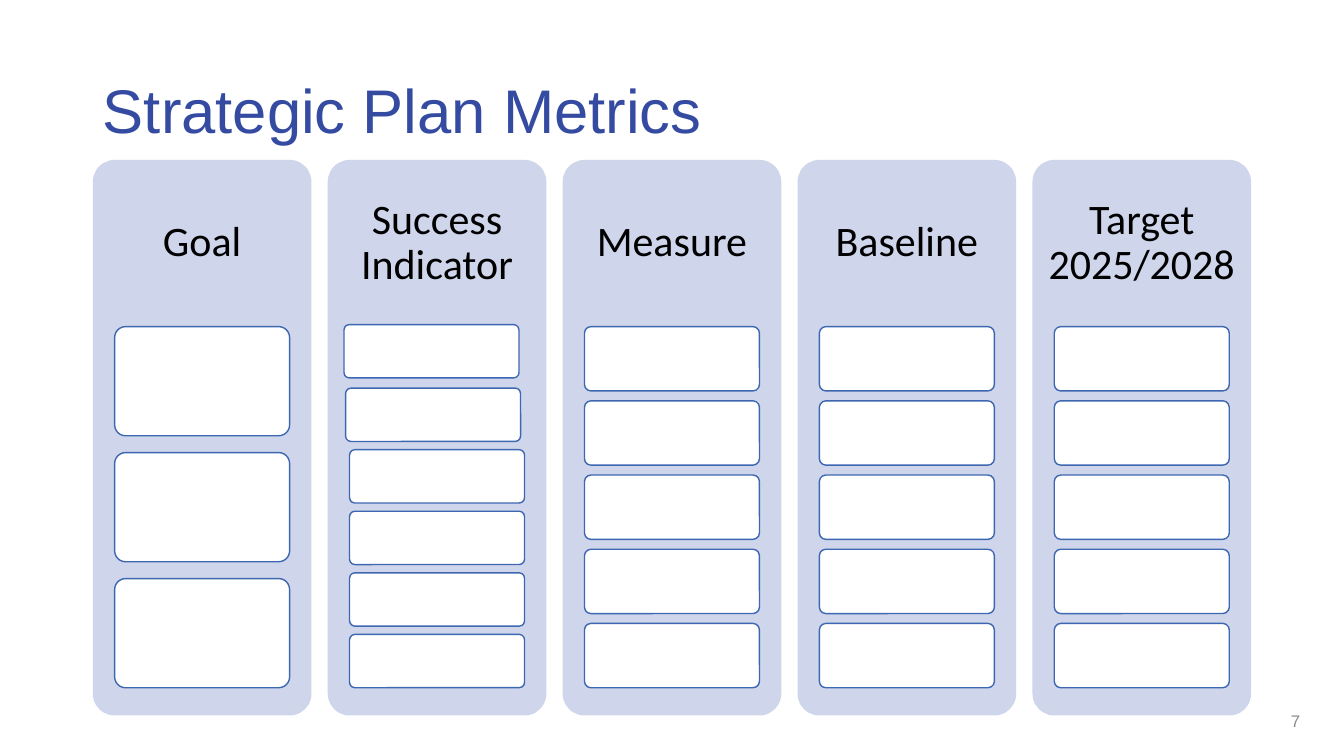
"""Build the Strategic Plan Metrics slide with five columns of empty entry boxes."""
from dataclasses import dataclass

from pptx import Presentation
from pptx import util as u
from pptx.dml.color import RGBColor
from pptx.enum import shapes, text

HEADING = "Strategic Plan Metrics"
PAGE = "7"
COLUMNS = [
    ("Goal", 3),
    ("Success Indicator", 6),
    ("Measure", 5),
    ("Baseline", 5),
    ("Target 2025/2028", 5),
]
NUDGES = {("Success Indicator", 0): (-0.14, -0.05), ("Success Indicator", 1): (-0.1, 0)}

LEFT, TOP, PITCH = 2.34, 4.03, 5.92
PANEL_WIDTH, PANEL_HEIGHT, HEADER_HEIGHT = 5.51, 14, 4.2
ENTRY_INSET, ENTRY_WIDTH, ENTRIES_HEIGHT = 0.55, 4.41, 9.1
GAP_RATIO = 2 / 13


@dataclass(frozen=True)
class Theme:
    """Colours, fonts and type sizes."""
    heading: str = "354BA2"
    page: str = "8C8C8C"
    panel: str = "CFD5EA"
    entry: str = "FFFFFF"
    outline: str = "3E67B2"
    ink: str = "000000"
    heading_font: str = "Arial"
    label_font: str = "Calibri"
    heading_size: int = 44
    label_size: int = 30
    page_size: int = 12


THEME = Theme()


def write(frame, words, font, size, color, align, spacing=1.0):
    """Put one formatted run in a vertically centred, wrapping frame."""
    frame.word_wrap = True
    frame.auto_size = text.MSO_AUTO_SIZE.NONE
    frame.vertical_anchor = text.MSO_ANCHOR.MIDDLE
    line = frame.paragraphs[0]
    line.alignment = align
    line.line_spacing = spacing
    run = line.add_run()
    run.text = words
    run.font.name = font
    run.font.size = u.Pt(size)
    run.font.color.rgb = RGBColor.from_string(color)


def rounded(group, box, fill, outline=None):
    """Add a rounded rectangle whose box is given in centimetres."""
    card = group.shapes.add_shape(shapes.MSO_SHAPE.ROUNDED_RECTANGLE, *map(u.Cm, box))
    card.adjustments[0] = 0.1
    card.shadow.inherit = False
    card.fill.solid()
    card.fill.fore_color.rgb = RGBColor.from_string(fill)
    if outline:
        card.line.color.rgb = RGBColor.from_string(outline)
        card.line.width = u.Pt(1)
    else:
        card.line.fill.background()


def add_column(group, left, label, count):
    """Add a panel, its label and evenly spaced entries."""
    rounded(group, (left, TOP, PANEL_WIDTH, PANEL_HEIGHT), THEME.panel)
    header = group.shapes.add_textbox(*map(u.Cm, (left, TOP, PANEL_WIDTH, HEADER_HEIGHT)))
    frame = header.text_frame
    frame.margin_left = frame.margin_right = u.Cm(0.3)
    frame.margin_top = frame.margin_bottom = u.Cm(0.3)
    write(frame, label, THEME.label_font, THEME.label_size, THEME.ink,
          text.PP_ALIGN.CENTER, 0.9)
    height = ENTRIES_HEIGHT / (count + (count - 1) * GAP_RATIO)
    for row in range(count):
        dx, dy = NUDGES.get((label, row), (0, 0))
        x = left + ENTRY_INSET + dx
        y = TOP + HEADER_HEIGHT + row * height * (1 + GAP_RATIO) + dy
        rounded(group, (x, y, ENTRY_WIDTH, height), THEME.entry, THEME.outline)


def main():
    """Assemble and save the slide."""
    deck = Presentation()
    deck.slide_width, deck.slide_height = u.Cm(33.87), u.Cm(19.05)
    slide = deck.slides.add_slide(deck.slide_layouts[5])

    heading = slide.shapes.title
    heading.left, heading.top, heading.width, heading.height = map(
        u.Cm, (LEFT, 1.02, 29.21, 3.68))
    write(heading.text_frame, HEADING, THEME.heading_font, THEME.heading_size,
          THEME.heading, text.PP_ALIGN.LEFT, 0.9)

    page = slide.shapes.add_textbox(*map(u.Cm, (25.4, 17.66, 7.62, 1.01)))
    write(page.text_frame, PAGE, THEME.heading_font, THEME.page_size,
          THEME.page, text.PP_ALIGN.RIGHT)

    metrics = slide.shapes.add_group_shape()
    for index, (label, count) in enumerate(COLUMNS):
        add_column(metrics, LEFT + index * PITCH, label, count)
    deck.save("out.pptx")


if __name__ == "__main__":
    main()
